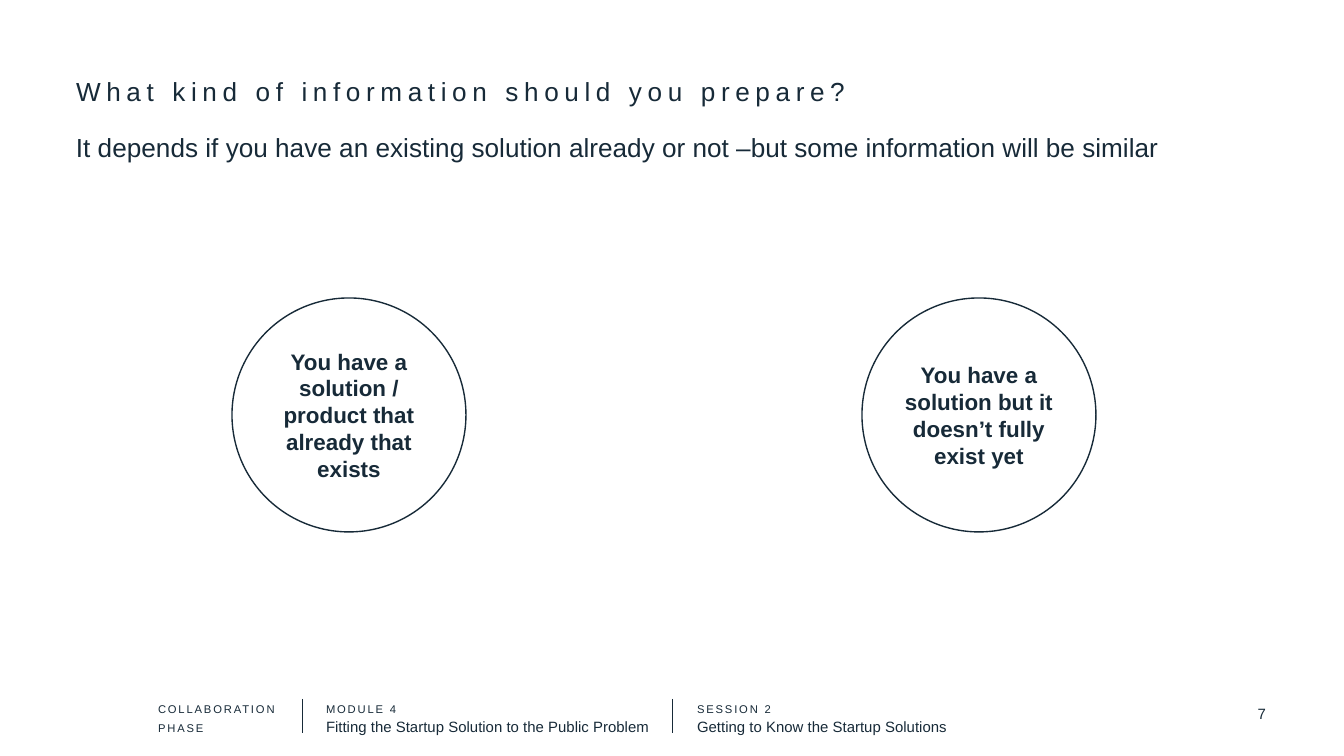
from lxml import etree
from pptx import Presentation
from pptx.dml.color import RGBColor
from pptx.enum.shapes import MSO_CONNECTOR, MSO_SHAPE
from pptx.enum.text import MSO_ANCHOR, PP_ALIGN
from pptx.oxml.ns import qn
from pptx.util import Pt

LEFT, CENTER, RIGHT = PP_ALIGN.LEFT, PP_ALIGN.CENTER, PP_ALIGN.RIGHT
TOP, MIDDLE = MSO_ANCHOR.TOP, MSO_ANCHOR.MIDDLE
OVAL, STRAIGHT = MSO_SHAPE.OVAL, MSO_CONNECTOR.STRAIGHT

NAVY = RGBColor(0x17, 0x2A, 0x38)
FONT = "Arial"
SCALE = 914400 / 134.4
INSET = 13

TITLE = "What kind of information should you prepare?"
BODY = "It depends if you have an existing solution already or not –but some information will be similar"
PAGE = "7"
CIRCLES = [
    (232, "You have a solution / product that already that exists"),
    (862, "You have a solution but it doesn’t fully exist yet"),
]
CIRCLE_TOP, CIRCLE_SIZE = 298, 234

LABEL = {"size": 6, "spacing": 1}
NAME = {"size": 8}
FOOTER = [
    ((145, 684, 155, 63), 10.2, [("COLLABORATION", LABEL), ("PHASE", LABEL)]),
    ((313, 683, 446, 63), 10.6,
     [("MODULE 4", LABEL), ("Fitting the Startup Solution to the Public Problem", NAME)]),
    ((684, 683, 402, 63), 10.6,
     [("SESSION 2", LABEL), ("Getting to Know the Startup Solutions", NAME)]),
]
DIVIDERS = [302, 673]
DIVIDER_TOP, DIVIDER_BOTTOM = 699, 733


def px(n):
    return round(n * SCALE)


def write(sp, lines, align=LEFT, anchor=TOP, inset=INSET, leading=None):
    tf = sp.text_frame
    tf.word_wrap = True
    tf.vertical_anchor = anchor
    tf.margin_left = tf.margin_right = tf.margin_top = tf.margin_bottom = px(inset)
    for i, (text, style) in enumerate(lines):
        p = tf.add_paragraph() if i else tf.paragraphs[0]
        p.alignment = align
        if leading:
            p.line_spacing = Pt(leading)
        r = p.add_run()
        r.text = text
        r.font.name = FONT
        r.font.size = Pt(style["size"])
        r.font.bold = style.get("bold", False)
        r.font.color.rgb = NAVY
        if "spacing" in style:
            r._r.get_or_add_rPr().set("spc", str(style["spacing"] * 100))


def add_text(s, box, lines, **layout):
    write(s.shapes.add_textbox(*map(px, box)), lines, **layout)


def add_divider(s, x):
    line = s.shapes.add_connector(
        STRAIGHT, px(x), px(DIVIDER_TOP), px(x), px(DIVIDER_BOTTOM))
    line.line.color.rgb = NAVY
    line.line.width = Pt(0.5)
    etree.SubElement(line._element.spPr, qn("a:effectLst"))


def add_circle(s, x, text):
    sp = s.shapes.add_shape(
        OVAL, px(x), px(CIRCLE_TOP), px(CIRCLE_SIZE), px(CIRCLE_SIZE))
    sp.shadow.inherit = False
    sp.fill.background()
    sp.line.color.rgb = NAVY
    sp.line.width = Pt(0.75)
    write(sp, [(text, {"size": 12, "bold": True})], CENTER, MIDDLE, 0)


def main():
    prs = Presentation()
    prs.slide_width, prs.slide_height = px(1344), px(756)
    s = prs.slides.add_slide(prs.slide_layouts[6])
    for box, leading, lines in FOOTER:
        add_text(s, box, lines, leading=leading)
    for x in DIVIDERS:
        add_divider(s, x)
    add_text(s, (1141, 694, 138, 40), [(PAGE, NAME)], align=RIGHT, anchor=MIDDLE)
    add_text(s, (63, 62, 1218, 103), [(TITLE, {"size": 14, "spacing": 3})])
    add_text(s, (63, 118, 1215, 560), [(BODY, {"size": 14})])
    for x, text in CIRCLES:
        add_circle(s, x, text)
    prs.save("out.pptx")


if __name__ == "__main__":
    main()
